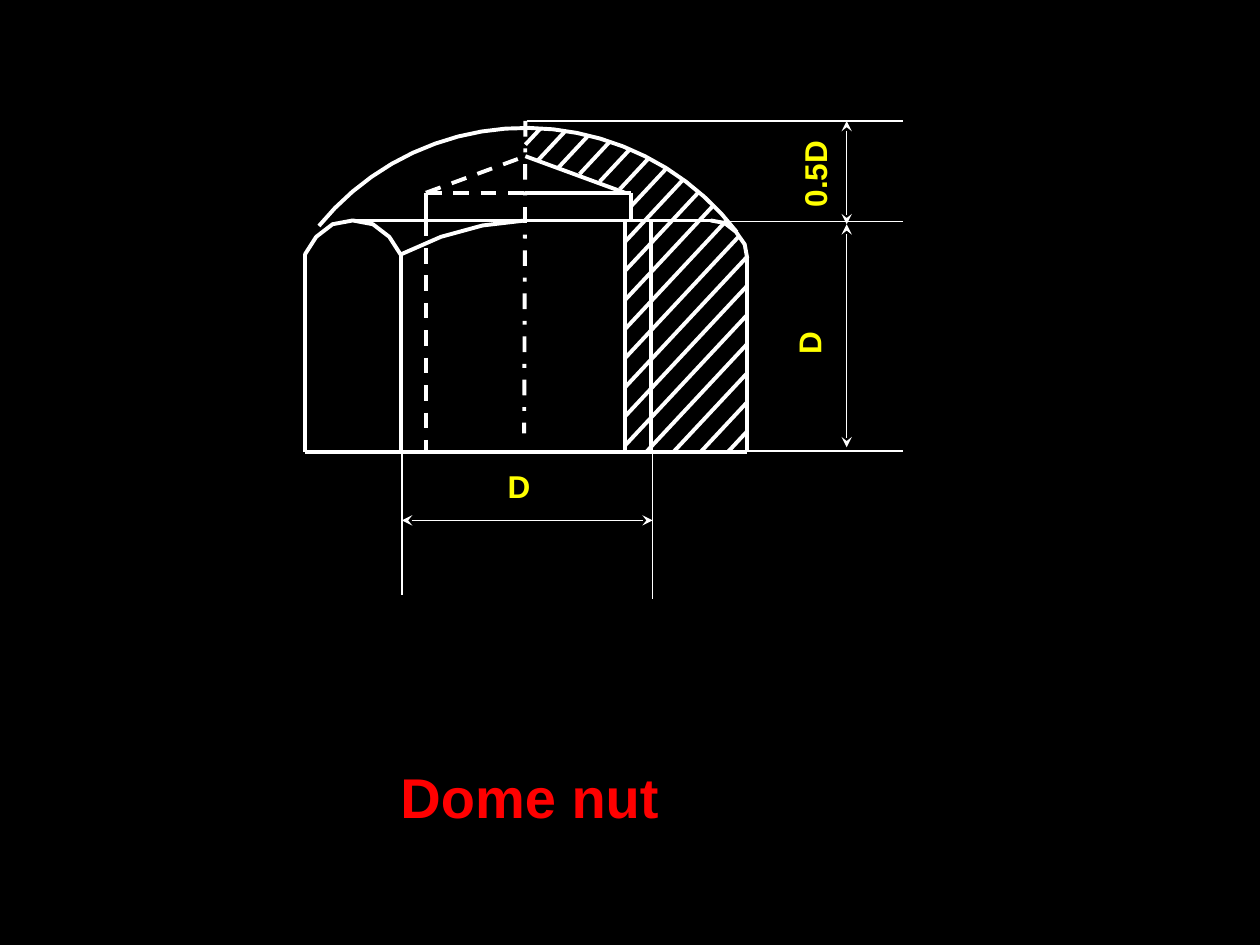
import math

import pptx
import pptx.dml.color
import pptx.enum.dml
import pptx.enum.shapes
import pptx.enum.text
import pptx.oxml
import pptx.oxml.ns
import pptx.util

COLS, ROWS = 100, 75
WHITE, YELLOW, RED, BLACK = "FFFFFF", "FFFF00", "FF0000", "000000"
DASH = pptx.enum.dml.MSO_LINE.DASH
DASH_DOT = pptx.enum.dml.MSO_LINE.DASH_DOT


def color(value):
    """Turn a hex string into a colour."""
    return pptx.dml.color.RGBColor.from_string(value)


class Drawing:
    """Holds the line style and the slide, measured in grid columns and rows."""

    def __init__(self, prs):
        """Add a blank black slide with a group for the nut."""
        self.cell = prs.slide_width / COLS
        self.s = prs.slides.add_slide(prs.slide_layouts[6])
        fill = self.s.background.fill
        fill.solid()
        fill.fore_color.rgb = color(BLACK)
        self.nut = self.s.shapes.add_group_shape().shapes
        self.thick, self.thin = 2.25, 0.75

    def emu(self, *values):
        """Convert grid units to whole EMU."""
        return [pptx.util.Emu(round(v * self.cell)) for v in values]

    def pen(self, line, width, dash=None):
        """Apply a white pen to a line."""
        line.color.rgb = color(WHITE)
        values = {"width": pptx.util.Pt(width), "dash_style": dash}
        for name, value in values.items():
            setattr(line, name, value)

    def straight(self, shapes, ends, width, dash=None):
        """Draw a straight line without a shadow."""
        kind = pptx.enum.shapes.MSO_CONNECTOR.STRAIGHT
        c = shapes.add_connector(kind, *self.emu(*ends))
        self.pen(c.line, width, dash)
        pptx.oxml.ns.qn("a:effectLst")
        c._element.spPr.append(pptx.oxml.parse_xml(
            f'<a:effectLst {pptx.oxml.ns.nsdecls("a")}/>'))
        return c

    def edge(self, *ends, dash=None):
        """Draw a straight edge of the nut."""
        self.straight(self.nut, ends, self.thick, dash)

    def curve(self, points):
        """Draw an open curve of the nut through the points."""
        pts = [self.emu(*p) for p in points]
        fb = self.nut.build_freeform(*pts[0], scale=1.0)
        fb.add_line_segments(pts[1:], close=False)
        sp = fb.convert_to_shape()
        sp.shadow.inherit = False
        sp.fill.background()
        self.pen(sp.line, self.thick)

    def extension(self, *ends):
        """Draw a thin extension line."""
        return self.straight(self.s.shapes, ends, self.thin)

    def dimension(self, *ends):
        """Draw a thin line with an arrowhead at both ends."""
        ln = self.extension(*ends).line._get_or_add_ln()
        for tag in ("headEnd", "tailEnd"):
            ln.append(pptx.oxml.parse_xml(
                f'<a:{tag} {pptx.oxml.ns.nsdecls("a")} type="stealth"/>'))

    def label(self, text, box, size=18, fill=YELLOW, rotation=0):
        """Place a bold label in a box."""
        sp = self.s.shapes.add_textbox(*self.emu(*box))
        sp.rotation = rotation
        tf = sp.text_frame
        tf.word_wrap = False
        tf.auto_size = pptx.enum.text.MSO_AUTO_SIZE.SHAPE_TO_FIT_TEXT
        r = tf.paragraphs[0].add_run()
        r.text = text
        values = {"name": "Arial", "size": pptx.util.Pt(size), "bold": True}
        for name, value in values.items():
            setattr(r.font, name, value)
        r.font.color.rgb = color(fill)


def draw_outline(d, axis, rim, base):
    """Draw the dome, the hexagon and the bored hole."""
    radius, steps, first, last = 21.15, 20, 37.5, 140.8
    angles = [math.radians(first + (last - first) * i / steps) for i in range(steps + 1)]
    d.curve([(axis + radius * math.cos(a), 31.3 - radius * math.sin(a)) for a in angles])
    d.curve([(axis, rim), (38.3, 17.9), (35, 18.8), (31.8, 20.2)])
    d.curve([(31.8, 20.2), (30.9, 18.8), (29.6, 17.8), (28, rim),
             (26.4, 17.8), (25.1, 18.8), (24.2, 20.2)])
    d.curve([(59.3, 20.5), (59.1, 19.4), (58.4, 18.4), (57.5, 17.7), (56.4, rim)])
    for x, top in ((24.2, 20.2), (31.8, 20.2), (49.6, rim), (51.7, rim), (59.3, 20.5)):
        d.edge(x, top, x, base)
    d.edge(28, rim, 56.4, rim)
    d.edge(24.2, base, 59.3, base)
    d.edge(axis, 9.6, 41.6, 34.4, dash=DASH_DOT)

    hole, tip = 15.3, 12.4
    d.edge(33.8, rim, 33.8, base, dash=DASH)
    d.edge(33.8, hole, axis, hole, dash=DASH)
    d.edge(33.8, hole, axis, tip, dash=DASH)
    d.edge(49.6, hole, axis, tip)
    d.edge(axis, hole, 50.1, hole)
    for x in (33.8, 50.1):
        d.edge(x, rim, x, hole)


def draw_hatching(d):
    """Draw evenly spaced parallel hatch lines across the cut half."""
    starts = [41.7, 42.7, 44.3, 46, 47.6, 49.2, 50.1] + [49.6] * 8 + [51.3, 53.4, 55.6, 57.8]
    ends = [42.9, 44.9, 46.7, 48.4, 50, 51.5, 52.9, 54.2, 55.5, 56.6, 57.7, 58.7] + [59.3] * 7
    slope, gap, left, top = 1.07, 2.31, 49.6, 3.03
    for i, (x1, x2) in enumerate(zip(starts, ends)):
        y1, y2 = (top + gap * i - slope * (x - left) for x in (x1, x2))
        d.edge(x1, y1, x2, y2)


def draw_dimensions(d):
    """Draw the extension lines, the dimension lines and the labels."""
    for y in (9.6, 17.6, 35.8):
        d.extension(41.8, y, 71.7, y)
    for x, y in ((31.9, 35.5), (51.8, 35.8)):
        d.extension(x, y, x, y + 11.7)
    d.dimension(67.2, 9.6, 67.2, 17.8)
    d.dimension(67.2, 17.8, 67.2, 35.5)
    d.dimension(31.9, 41.3, 51.8, 41.3)
    d.label("D", (39.3, 36.6, 3.8, 4))
    d.label("D", (62.3, 25.2, 3.8, 4), rotation=270)
    d.label("0.5D", (61, 11.8, 7.3, 4), rotation=270)


def main():
    """Build the dome nut slide."""
    prs = pptx.Presentation()
    prs.slide_width, prs.slide_height = pptx.util.Inches(10), pptx.util.Inches(7.5)
    d = Drawing(prs)
    d.label("Dome nut", (30.8, 60, 22.5, 6.3), size=32, fill=RED)
    draw_outline(d, axis=41.7, rim=17.5, base=35.9)
    draw_hatching(d)
    draw_dimensions(d)
    prs.save("out.pptx")


if __name__ == "__main__":
    main()
